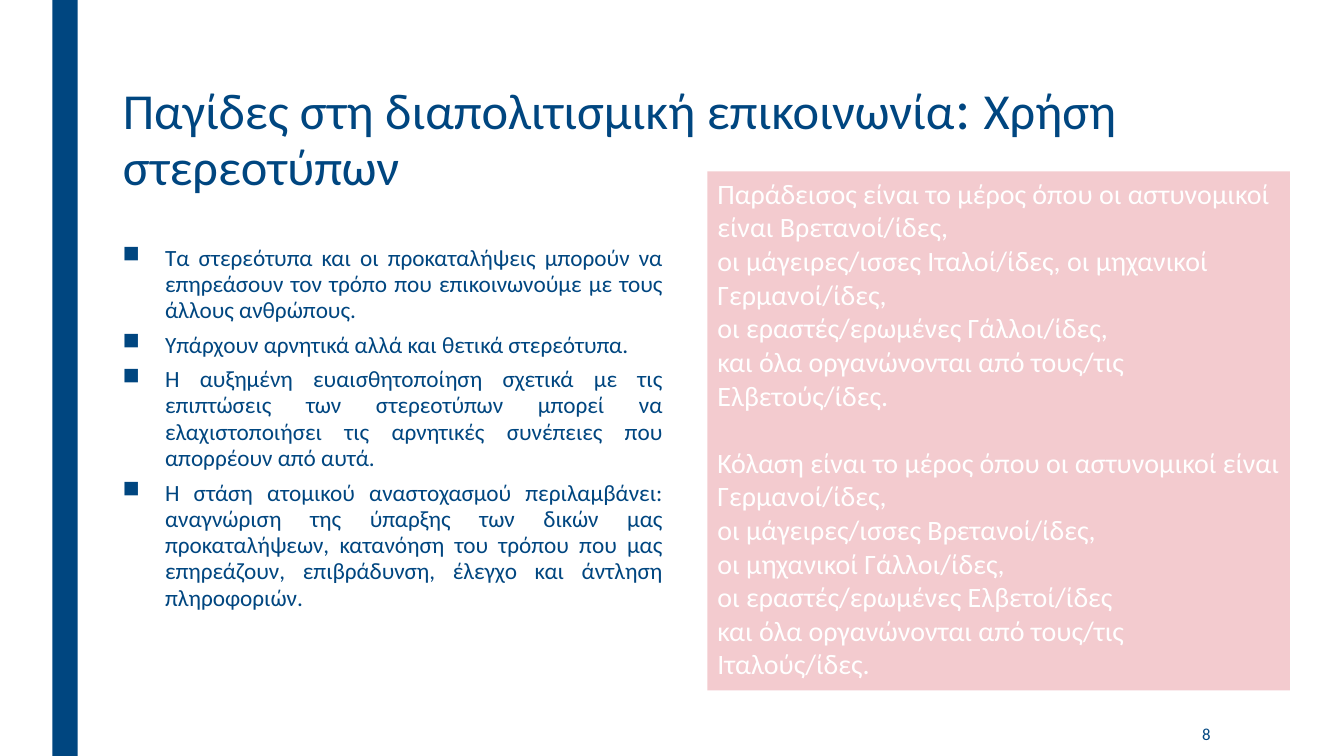
"""Build a slide on stereotypes in intercultural communication."""
import pptx
import pptx.dml.color
import pptx.enum.shapes
import pptx.enum.text
import pptx.oxml.ns
import pptx.util
from lxml import etree
from pptx.util import Cm, Pt

NAVY, PINK, WHITE = "004680", "F3CBCF", "FFFFFF"
FONT = "Calibri"
ALIGN = pptx.enum.text.PP_ALIGN
ANCHOR = pptx.enum.text.MSO_ANCHOR

TITLE = [[("Παγίδες στη διαπολιτισμική επικοινωνία", 36), (": ", 41), ("Χρήση στερεοτύπων", 36)]]
POINTS = [
    "Τα στερεότυπα και οι προκαταλήψεις μπορούν να επηρεάσουν τον τρόπο που επικοινωνούμε με τους άλλους ανθρώπους.",
    "Υπάρχουν αρνητικά αλλά και θετικά στερεότυπα.",
    "Η αυξημένη ευαισθητοποίηση σχετικά με τις επιπτώσεις των στερεοτύπων μπορεί να ελαχιστοποιήσει "
    "τις αρνητικές συνέπειες που απορρέουν από αυτά.",
    "Η στάση ατομικού αναστοχασμού περιλαμβάνει: αναγνώριση της ύπαρξης των δικών μας προκαταλήψεων, "
    "κατανόηση του τρόπου που μας επηρεάζουν, επιβράδυνση, έλεγχο και άντληση πληροφοριών.",
]
JOKE = [
    "Παράδεισος είναι το μέρος όπου οι αστυνομικοί είναι Βρετανοί/ίδες,\n"
    "οι μάγειρες/ισσες Ιταλοί/ίδες, οι μηχανικοί Γερμανοί/ίδες,\n"
    "οι εραστές/ερωμένες Γάλλοι/ίδες,\n"
    "και όλα οργανώνονται από τους/τις Ελβετούς/ίδες.",
    "Κόλαση είναι το μέρος όπου οι αστυνομικοί είναι Γερμανοί/ίδες,\n"
    "οι μάγειρες/ισσες Βρετανοί/ίδες,\n"
    "οι μηχανικοί Γάλλοι/ίδες,\n"
    "οι εραστές/ερωμένες Ελβετοί/ίδες\n"
    "και όλα οργανώνονται από τους/τις Ιταλούς/ίδες.",
]
PAGE_NUMBER = ["8"]

TITLE_AREA = (2.84, 1.91, 29.13, 4.11)
STRIPE_AREA = (1.32, 0, 0.64, 19.05)
POINTS_AREA = (2.84, 6.05, 14.1, 9.96)
NUMBER_AREA = (26.31, 17.93, 4.45, 1.12)
JOKE_AREA = (17.83, 4.32, 14.68, 13.08)
BULLET_INDENT = 1.07


def colour(value):
    return pptx.dml.color.RGBColor.from_string(value)


def place(box, area):
    box.left, box.top, box.width, box.height = map(Cm, area)


def add_bullet(para):
    properties = para._p.get_or_add_pPr()
    properties.set("marL", str(Cm(BULLET_INDENT)))
    properties.set("indent", str(-Cm(BULLET_INDENT)))
    etree.SubElement(properties, pptx.oxml.ns.qn("a:buChar"), char="■")


def write(box, paragraphs, size=None, ink=NAVY, align=ALIGN.LEFT, anchor=ANCHOR.TOP,
          line=1.0, after=0, gap=0, bullet=False):
    frame = box.text_frame
    frame.word_wrap = True
    frame.auto_size = pptx.enum.text.MSO_AUTO_SIZE.NONE
    frame.vertical_anchor = anchor
    for index, content in enumerate(paragraphs):
        para = frame.add_paragraph() if index else frame.paragraphs[0]
        para.alignment = align
        para.line_spacing = line
        para.space_before = Pt(gap if index else 0)
        para.space_after = Pt(after)
        if bullet:
            add_bullet(para)
        spans = [(content, size)] if isinstance(content, str) else content
        for text, points in spans:
            for number, words in enumerate(text.split("\n")):
                if number:
                    para.add_line_break()
                span = para.add_run()
                span.text = words
                span.font.name = FONT
                span.font.size = Pt(points)
                span.font.color.rgb = colour(ink)


def add_block(page, area, fill):
    block = page.shapes.add_shape(pptx.enum.shapes.MSO_SHAPE.RECTANGLE, *map(Cm, area))
    block.shadow.inherit = False
    block.fill.solid()
    block.fill.fore_color.rgb = colour(fill)
    block.line.fill.background()
    return block


def main():
    deck = pptx.Presentation()
    deck.slide_width, deck.slide_height = Cm(33.87), Cm(19.05)
    page = deck.slides.add_slide(deck.slide_layouts[5])

    title = page.shapes.title
    place(title, TITLE_AREA)
    write(title, TITLE, line=0.89)

    add_block(page, STRIPE_AREA, NAVY)

    points = page.shapes.add_textbox(*map(Cm, POINTS_AREA))
    write(points, POINTS, size=16.6, align=ALIGN.JUSTIFY, line=0.94, after=6, bullet=True)

    number = page.shapes.add_textbox(*map(Cm, NUMBER_AREA))
    write(number, PAGE_NUMBER, size=12, align=ALIGN.RIGHT, anchor=ANCHOR.MIDDLE, after=6)

    joke = add_block(page, JOKE_AREA, PINK)
    write(joke, JOKE, size=20, ink=WHITE, gap=24)

    deck.save("out.pptx")


if __name__ == "__main__":
    main()
